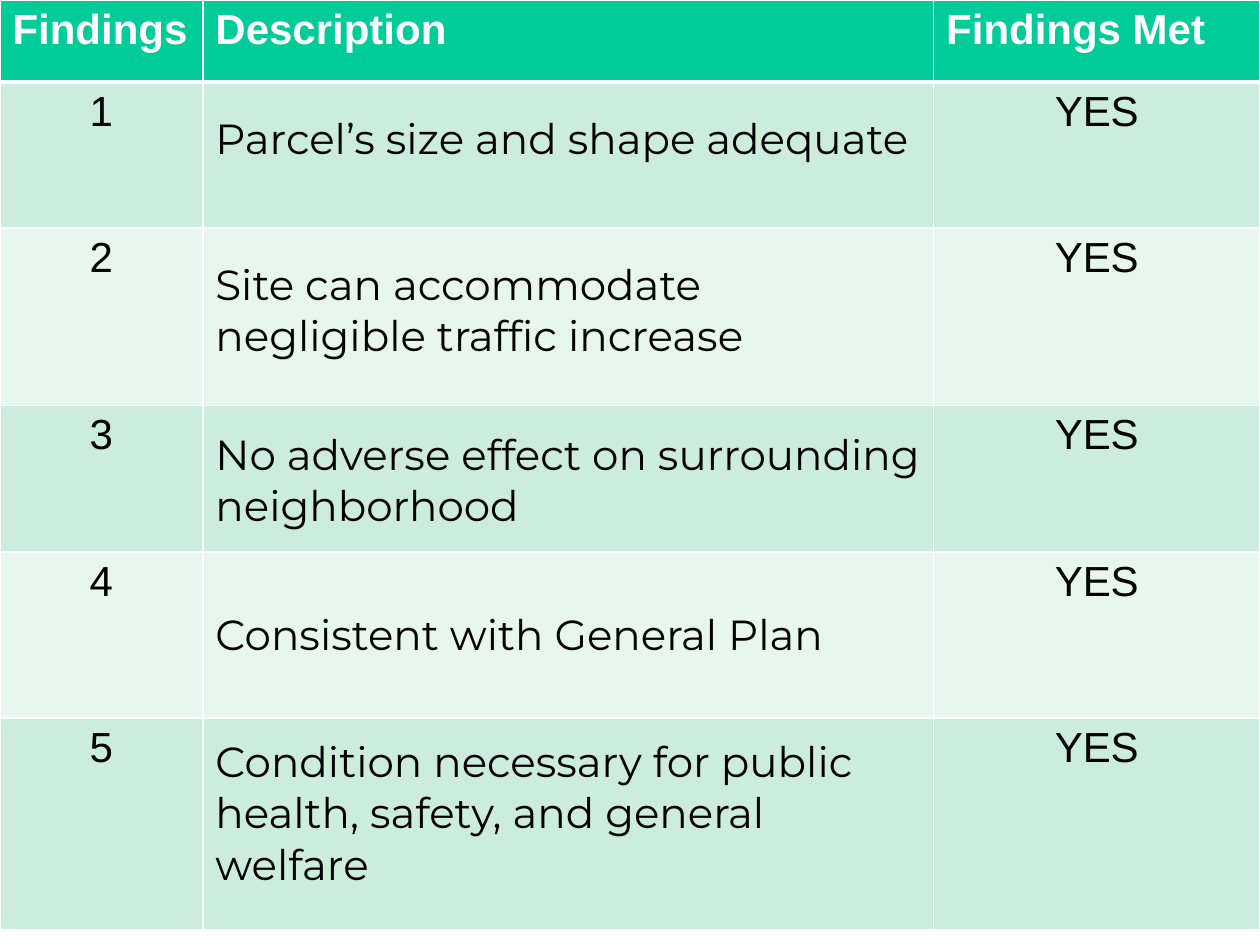
from dataclasses import dataclass

from lxml.etree import SubElement
from pptx import Presentation
from pptx.dml.color import RGBColor
from pptx.enum.text import PP_ALIGN as Align
from pptx.oxml.ns import qn
from pptx.util import Inches, Pt

UNIT = Inches(0.01)
SLIDE_COLS, SLIDE_ROWS = 1000, 750
COL_UNITS = (161, 580, 259)
ROW_UNITS = (65, 116, 141, 116, 132, 168)
HEADERS = ("Findings", "Description", "Findings Met")
HEADER_FILL, BANDS = "00CC99", ("CCECDE", "E7F6EF")
WHITE, BLACK = "FFFFFF", "000000"
THIN, THICK = 1, 3


@dataclass(frozen=True)
class Finding:
    text: str
    inset: float
    met: str = "YES"


@dataclass(frozen=True)
class CellStyle:
    fill: str
    color: str = BLACK
    font: str = "Arial"
    bold: bool = False
    align: Align = Align.LEFT
    inset: float = 5
    top: int = THIN
    bottom: int = THIN


FINDINGS = (
    Finding("Parcel’s size and shape adequate", 25),
    Finding("Site can accommodate negligible traffic increase", 25),
    Finding("No adverse effect on surrounding neighborhood", 19),
    Finding("Consistent with General Plan", 46),
    Finding("Condition necessary for public health, safety, and general welfare", 15),
)


def rgb(value: str) -> RGBColor:
    return RGBColor.from_string(value)


def set_borders(cell, style: CellStyle) -> None:
    props = cell._tc.get_or_add_tcPr()
    widths = {"lnL": THIN, "lnR": THIN, "lnT": style.top, "lnB": style.bottom}
    for side, width in widths.items():
        line = SubElement(props, qn(f"a:{side}"), w=str(Pt(width)))
        fill = SubElement(line, qn("a:solidFill"))
        SubElement(fill, qn("a:srgbClr"), val=WHITE)


def write_cell(cell, text: str, style: CellStyle) -> None:
    set_borders(cell, style)
    cell.fill.solid()
    cell.fill.fore_color.rgb = rgb(style.fill)
    cell.margin_top = int(style.inset * UNIT)
    p = cell.text_frame.paragraphs[0]
    p.alignment = style.align
    r = p.add_run()
    r.text = text
    for name, value in {"name": style.font, "size": Pt(24), "bold": style.bold}.items():
        setattr(r.font, name, value)
    r.font.color.rgb = rgb(style.color)


def write_row(table, row: int, texts: tuple, styles: tuple) -> None:
    for col, (text, style) in enumerate(zip(texts, styles)):
        write_cell(table.cell(row, col), text, style)


def add_findings_table(s) -> None:
    table = s.shapes.add_table(
        len(ROW_UNITS), len(COL_UNITS), 0, 0,
        SLIDE_COLS * UNIT, sum(ROW_UNITS) * UNIT,
    ).table
    table.horz_banding = False
    for column, units in zip(table.columns, COL_UNITS):
        column.width = units * UNIT
    for row, units in zip(table.rows, ROW_UNITS):
        row.height = units * UNIT

    header = CellStyle(HEADER_FILL, WHITE, bold=True, bottom=THICK)
    write_row(table, 0, HEADERS, (header,) * len(HEADERS))
    for number, finding in enumerate(FINDINGS, 1):
        fill = BANDS[(number - 1) % 2]
        top = THICK if number == 1 else THIN
        centred = CellStyle(fill, align=Align.CENTER, top=top)
        described = CellStyle(fill, font="Montserrat", inset=finding.inset, top=top)
        write_row(table, number, (str(number), finding.text, finding.met),
                  (centred, described, centred))


def main() -> None:
    prs = Presentation()
    prs.slide_width = SLIDE_COLS * UNIT
    prs.slide_height = SLIDE_ROWS * UNIT
    s = prs.slides.add_slide(prs.slide_layouts[6])
    add_findings_table(s)
    prs.save("out.pptx")


if __name__ == "__main__":
    main()
